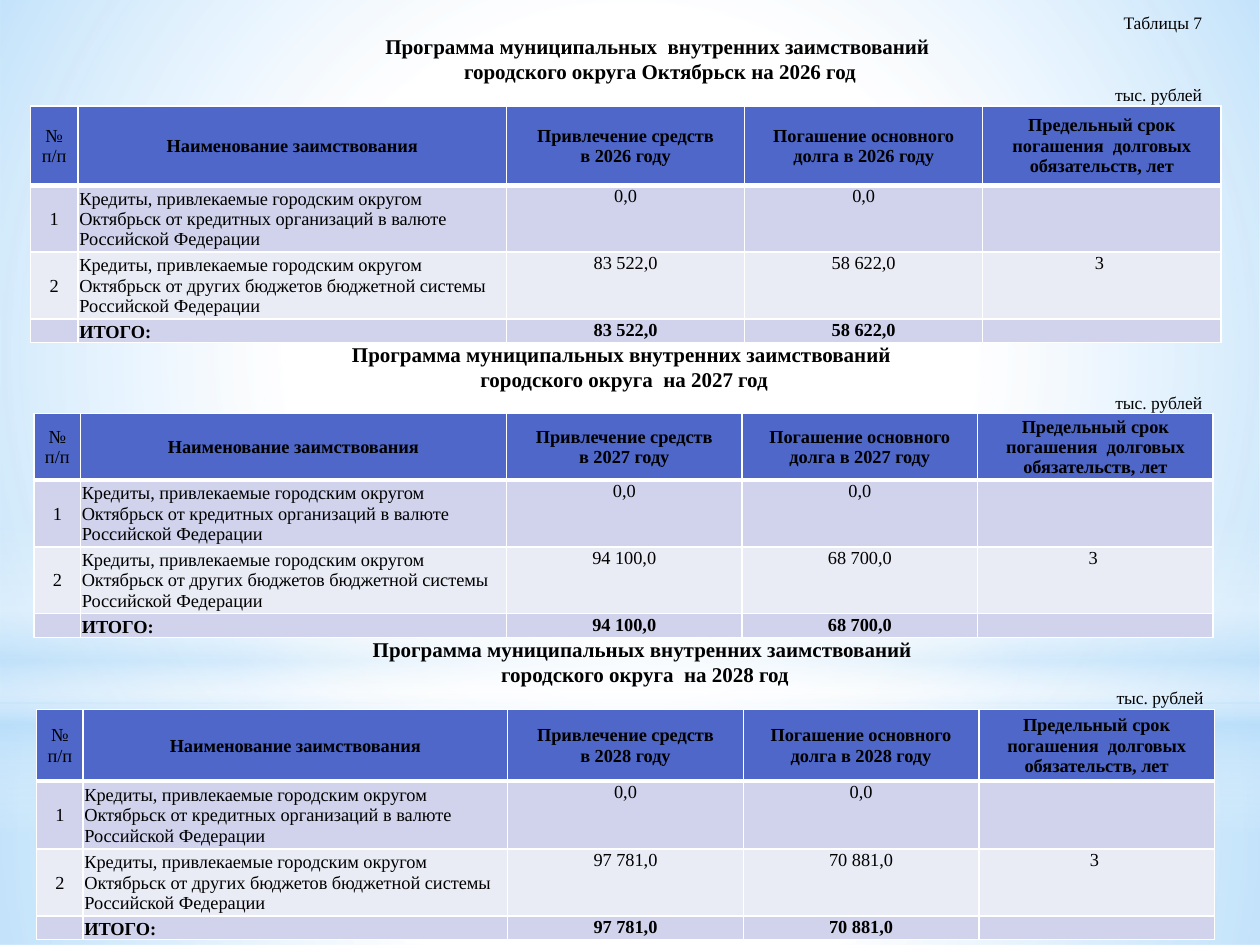
"""Build a slide with three municipal borrowing programme tables."""
from lxml import etree
from pptx import Presentation
from pptx.dml.color import RGBColor
from pptx.enum.shapes import MSO_SHAPE
from pptx.enum.text import MSO_ANCHOR, MSO_AUTO_SIZE, PP_ALIGN
from pptx.oxml.ns import qn
from pptx.util import Inches, Pt

LEFT, CENTER, RIGHT = PP_ALIGN.LEFT, PP_ALIGN.CENTER, PP_ALIGN.RIGHT
TOP, MIDDLE, BOTTOM = MSO_ANCHOR.TOP, MSO_ANCHOR.MIDDLE, MSO_ANCHOR.BOTTOM
RECTANGLE, OVAL = MSO_SHAPE.RECTANGLE, MSO_SHAPE.OVAL
NO_RESIZE = MSO_AUTO_SIZE.NONE
BLACK = RGBColor(0x00, 0x00, 0x00)
WHITE = RGBColor(0xFF, 0xFF, 0xFF)
SKY = RGBColor(0xB4, 0xDC, 0xFA)
HEADER = RGBColor(0x4E, 0x67, 0xC8)
DARK_BAND = RGBColor(0xD0, 0xD3, 0xEB)
LIGHT_BAND = RGBColor(0xE9, 0xEB, 0xF5)
FONT = "Times New Roman"


def write(para, text, size=10.5, bold=False, align=LEFT, indent=0):
    para.alignment = align
    if indent:
        para._p.get_or_add_pPr().set("indent", str(Inches(indent)))
    if not text:
        etree.SubElement(para._p, qn("a:endParaRPr"), sz=str(int(size * 100)))
        return
    para.text = text
    for span in para.runs:
        span.font.name = FONT
        span.font.size = Pt(size)
        span.font.bold = bold
        span.font.color.rgb = BLACK


def add_gradient(shape, stops, angle=None):
    properties = shape._element.spPr
    gradient = etree.Element(qn("a:gradFill"), rotWithShape="1")
    stop_list = etree.SubElement(gradient, qn("a:gsLst"))
    for position, color, opacity in stops:
        stop = etree.SubElement(stop_list, qn("a:gs"), pos=str(position * 1000))
        tint = etree.SubElement(stop, qn("a:srgbClr"), val=str(color))
        etree.SubElement(tint, qn("a:alpha"), val=str(opacity * 1000))
    if angle is None:
        path = etree.SubElement(gradient, qn("a:path"), path="circle")
        etree.SubElement(path, qn("a:fillToRect"), l="50000", t="50000", r="50000", b="50000")
    else:
        etree.SubElement(gradient, qn("a:lin"), ang=str(angle * 60000), scaled="0")
    properties.find(qn("a:prstGeom")).addnext(gradient)


deck = Presentation()
deck.slide_width, deck.slide_height = Inches(10), Inches(7.5)
page = deck.slides.add_slide(deck.slide_layouts[5])
page.background.fill.solid()
page.background.fill.fore_color.rgb = WHITE

BACKDROP = [
    (RECTANGLE, 5.58, 1.92, [(0, WHITE, 91), (37, WHITE, 76), (100, SKY, 79)], None),
    (RECTANGLE, 0, 5.58, [(0, WHITE, 89), (48, WHITE, 62), (100, SKY, 79)], None),
    (RECTANGLE, 4.12, 2.5, [(0, WHITE, 0), (29, WHITE, 30), (45, SKY, 40),
                            (55, WHITE, 26), (65, SKY, 60), (100, WHITE, 0)], 90),
    (OVAL, 1.75, 5.58, [(0, WHITE, 100), (56, WHITE, 0)], None),
]
for kind, top, height, stops, angle in BACKDROP:
    glow = page.shapes.add_shape(kind, 0, Inches(top), Inches(10), Inches(height))
    glow.shadow.inherit = False
    glow.line.fill.background()
    add_gradient(glow, stops, angle)

title = page.shapes.title
page.shapes._spTree.append(title._element)

UNITS = ("тыс. рублей", 10, False, RIGHT)
HEADINGS = [
    ((0.35, 0.05, 9.29, 0.84), 0.49, [
        ("Таблицы 7", 10, False, RIGHT),
        ("Программа муниципальных  внутренних заимствований ", 12, True, CENTER),
        ("городского округа Октябрьск на 2026 год", 12, True, CENTER),
        UNITS]),
]
for year, place in ((2027, (0.27, 2.51, 9.37, 0.83)), (2028, (0.59, 5.01, 9.06, 0.67))):
    heading = f"Программа муниципальных внутренних заимствований \vгородского округа  на {year} год"
    HEADINGS.append((place, 0, [(heading, 12, True, CENTER), UNITS]))

for number, (place, indent, lines) in enumerate(HEADINGS):
    left, top, width, height = map(Inches, place)
    box = title if number == 0 else page.shapes.add_textbox(left, top, width, height)
    box.left, box.top, box.width, box.height = left, top, width, height
    frame = box.text_frame
    frame.word_wrap = True
    frame.auto_size = NO_RESIZE
    frame.vertical_anchor = BOTTOM
    frame.margin_left = frame.margin_right = Inches(0.1)
    frame.margin_top, frame.margin_bottom = Inches(0.05), Inches(0.06)
    for index, (text, size, bold, align) in enumerate(lines):
        para = frame.add_paragraph() if index else frame.paragraphs[0]
        write(para, text, size, bold, align, indent)

CREDIT = "Кредиты, привлекаемые городским округом Октябрьск от {} Российской Федерации"
BANKS = CREDIT.format("кредитных организаций в валюте")
BUDGETS = CREDIT.format("других бюджетов бюджетной системы")
BAND_FILLS = [HEADER, DARK_BAND, LIGHT_BAND, DARK_BAND]
PROGRAMS = [
    (2026, 0.24, 0.84, (0.38, 3.4, 1.89, 1.89, 1.89), (0.63, 0.53, 0.53, 0.18),
     "83 522,0", "58 622,0"),
    (2027, 0.27, 3.28, (0.37, 3.38, 1.87, 1.87, 1.87), (0.53, 0.53, 0.53, 0.19),
     "94 100,0", "68 700,0"),
    (2028, 0.29, 5.63, (0.37, 3.37, 1.87, 1.87, 1.87), (0.57, 0.54, 0.53, 0.18),
     "97 781,0", "70 881,0"),
]
for year, left, top, widths, heights, raised, repaid in PROGRAMS:
    rows = [
        ("№ п/п", "Наименование заимствования", f"Привлечение средств\vв {year} году",
         f"Погашение основного\vдолга в {year} году",
         "Предельный срок погашения  долговых обязательств, лет"),
        ("1", BANKS, "0,0", "0,0", ""),
        ("2", BUDGETS, raised, repaid, "3 "),
        ("", "ИТОГО:", raised, repaid, ""),
    ]
    table = page.shapes.add_table(len(rows), len(widths), Inches(left), Inches(top),
                                  Inches(sum(widths)), Inches(sum(heights))).table
    table.first_row = table.horz_banding = False
    for column, width in zip(table.columns, widths):
        column.width = Inches(width)
    for row, height in zip(table.rows, heights):
        row.height = Inches(height)
    for r, values in enumerate(rows):
        for c, text in enumerate(values):
            cell = table.cell(r, c)
            cell.margin_left = cell.margin_right = cell.margin_top = Inches(0.01)
            cell.margin_bottom = 0
            if r == 0 or (c < 2 and r < 3):
                cell.vertical_anchor = MIDDLE
            else:
                cell.vertical_anchor = BOTTOM if c == 1 else TOP
            cell.fill.solid()
            cell.fill.fore_color.rgb = BAND_FILLS[r]
            write(cell.text_frame.paragraphs[0], text,
                  bold=r == 3 or (r == 0 and c > 0),
                  align=LEFT if c == 1 and r else CENTER)
            for order, side in enumerate("LRTB"):
                thick = (r, side) in ((0, "B"), (1, "T"))
                border = etree.Element(qn(f"a:ln{side}"), w=str(Pt(3 if thick else 1)))
                paint = etree.SubElement(border, qn("a:solidFill"))
                etree.SubElement(paint, qn("a:srgbClr"), val=str(WHITE))
                cell._tc.tcPr.insert(order, border)

deck.save("out.pptx")
